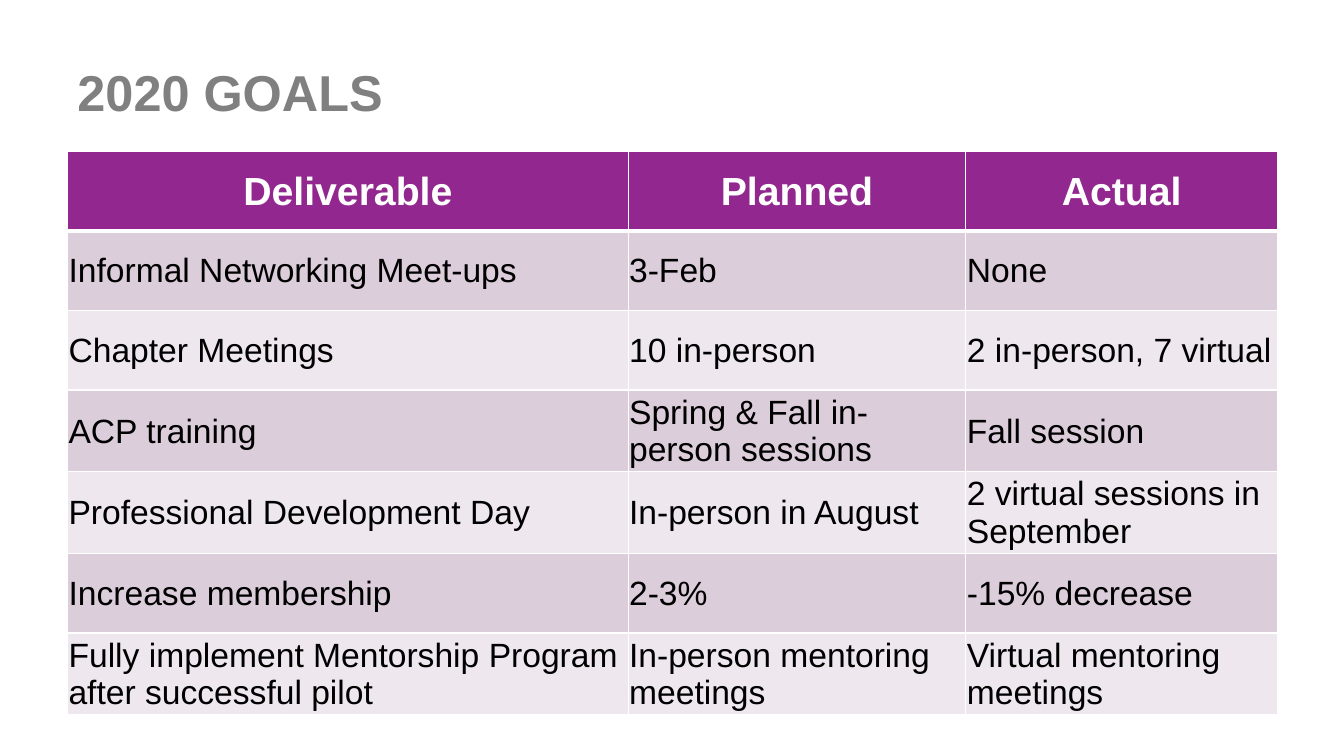
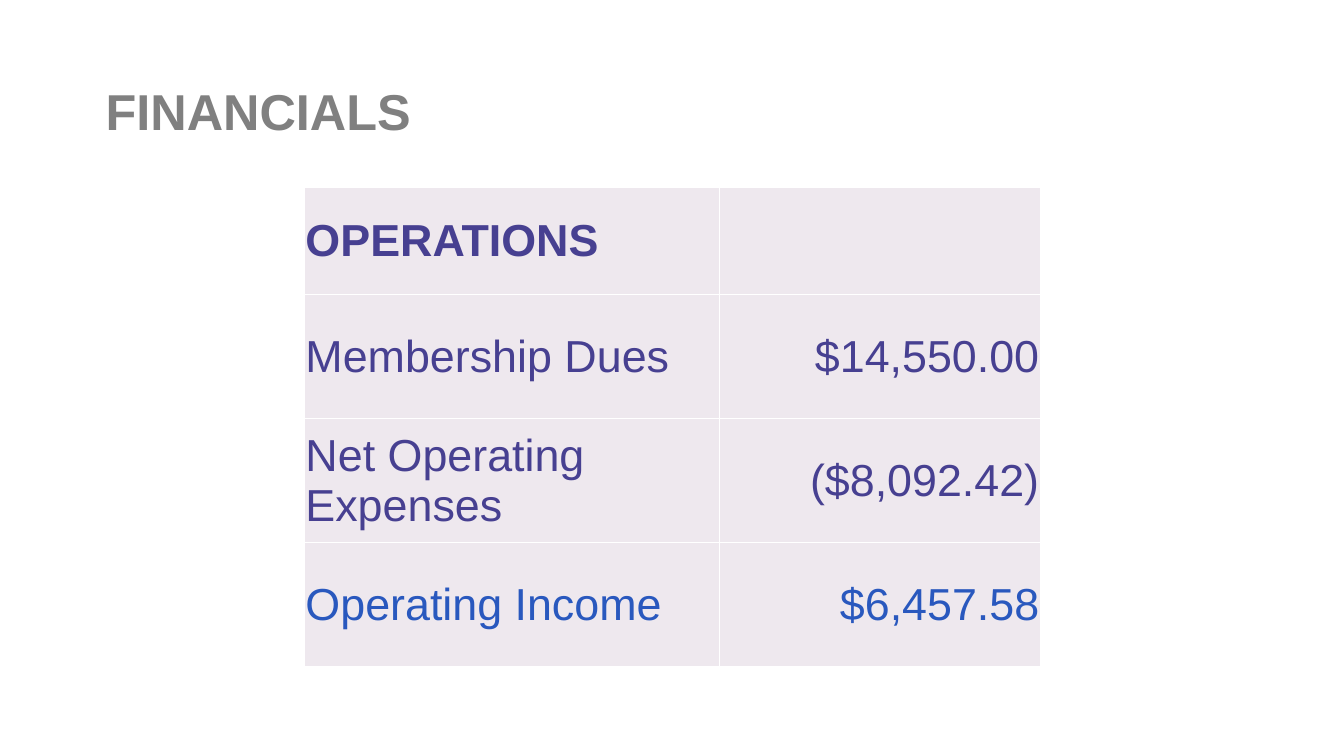
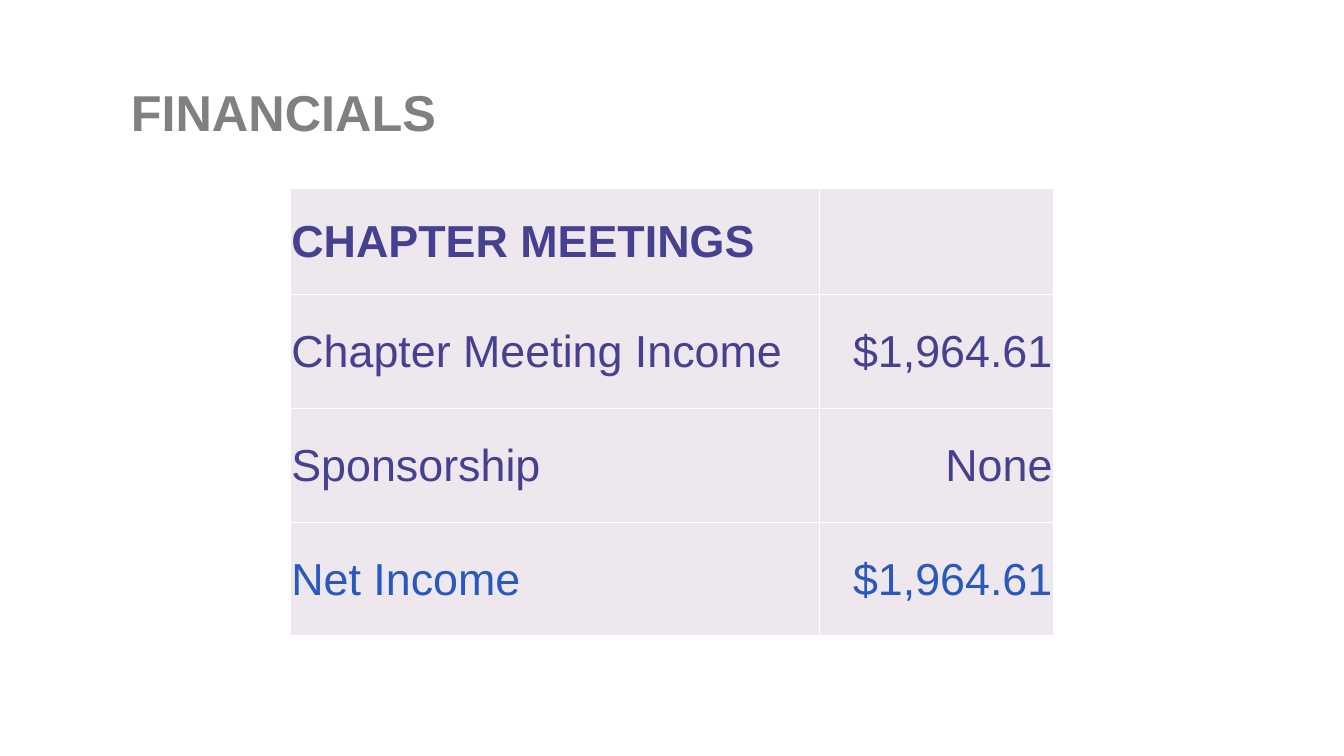
from lxml import etree
from pptx import Presentation
from pptx.dml.color import RGBColor
from pptx.enum.text import MSO_ANCHOR, PP_ALIGN
from pptx.oxml.ns import qn
from pptx.util import Inches, Pt

LEFT, CENTER, RIGHT = PP_ALIGN.LEFT, PP_ALIGN.CENTER, PP_ALIGN.RIGHT
MIDDLE = MSO_ANCHOR.MIDDLE

FONT = "Arial"
COLORS = {
    "title": "808080", "header": "92278F", "white": "FFFFFF", "black": "000000",
    "band": "DCCDDB", "pale": "EEE8EE", "label": "474091", "total": "2958BE",
}

GOALS = [
    ("Deliverable", "Planned", "Actual"),
    ("Informal Networking Meet-ups", "3-Feb", "None"),
    ("Chapter Meetings", "10 in-person", "2 in-person, 7 virtual"),
    ("ACP training", "Spring & Fall in-person sessions", "Fall session"),
    ("Professional Development Day", "In-person in August",
     "2 virtual sessions in September"),
    ("Increase membership", "2-3%", "-15% decrease"),
    ("Fully implement Mentorship Program after successful pilot",
     "In-person mentoring meetings", "Virtual mentoring meetings"),
]
OPERATIONS = [
    ("OPERATIONS", ""),
    ("Membership Dues", "$14,550.00"),
    ("Net Operating Expenses", "($8,092.42)"),
    ("Operating Income", "$6,457.58"),
]
MEETINGS = [
    ("CHAPTER MEETINGS", ""),
    ("Chapter Meeting Income", "$1,964.61"),
    ("Sponsorship", "None"),
    ("Net Income", "$1,964.61"),
]


def goals_style(row, col, rows):
    if row == 0:
        return "header", dict(size=28, color="white", bold=True, align=CENTER)
    return ("band" if row % 2 else "pale"), dict(size=24, color="black")


def financials_style(row, col, rows):
    return "pale", dict(size=32, bold=row == 0, align=RIGHT if col else LEFT,
                        color="total" if row == rows - 1 else "label")


# title, title box, table rows, table corner, column widths,
# header height, row height, cell style, line width under the header
SLIDES = [
    ("2020 GOALS", (0.67, 0.22, 11.5, 1.45), GOALS, (0.67, 1.5),
     (5.56, 3.35, 3.09), 0.79, 0.79, goals_style, 3),
    ("FINANCIALS", (0.95, 0.41, 7.8, 1.45), OPERATIONS, (3.02, 1.86),
     (4.12, 3.18), 1.06, 1.23, financials_style, 1),
    ("FINANCIALS", (1.2, 0.42, 5.46, 1.45), MEETINGS, (2.88, 1.87),
     (5.25, 2.32), 1.05, 1.13, financials_style, 1),
]


def rgb(name):
    return RGBColor.from_string(COLORS[name])


def write(tf, text, size, color, bold=False, align=LEFT, spacing=None):
    tf.word_wrap = True
    p = tf.paragraphs[0]
    p.alignment = align
    if spacing:
        p.line_spacing = spacing
    r = p.add_run()
    r.text = text
    r.font.name, r.font.size, r.font.bold = FONT, Pt(size), bold
    r.font.color.rgb = rgb(color)


def add_title(s, text, box):
    tf = s.shapes.add_textbox(*map(Inches, box)).text_frame
    tf.vertical_anchor = MIDDLE
    write(tf, text, size=36, color="title", bold=True, spacing=0.9)


def set_borders(cell, top, bottom):
    """Draw white borders; call before the fill, which must follow them."""
    tc_pr = cell._tc.get_or_add_tcPr()
    for side, width in (("L", 1), ("R", 1), ("T", top), ("B", bottom)):
        ln = etree.SubElement(tc_pr, qn("a:ln" + side), w=str(Pt(width)))
        fill = etree.SubElement(ln, qn("a:solidFill"))
        etree.SubElement(fill, qn("a:srgbClr"), val=COLORS["white"])


def add_grid(s, rows, corner, widths, header_height, row_height, style, rule):
    heights = [header_height] + [row_height] * (len(rows) - 1)
    size = (sum(widths), sum(heights))
    table = s.shapes.add_table(len(rows), len(widths),
                               *map(Inches, corner + size)).table
    table.first_row = table.horz_banding = False
    for column, width in zip(table.columns, widths):
        column.width = Inches(width)
    for i, (row, height) in enumerate(zip(rows, heights)):
        table.rows[i].height = Inches(height)
        for j, text in enumerate(row):
            cell = table.cell(i, j)
            fill, text_format = style(i, j, len(rows))
            set_borders(cell, top=rule if i == 1 else 1,
                        bottom=rule if i == 0 else 1)
            cell.fill.solid()
            cell.fill.fore_color.rgb = rgb(fill)
            cell.vertical_anchor = MIDDLE
            cell.margin_left = cell.margin_right = cell.margin_top = Inches(0.01)
            cell.margin_bottom = 0
            if text:
                write(cell.text_frame, text, **text_format)


def main():
    prs = Presentation()
    prs.slide_width, prs.slide_height = Inches(13.33), Inches(7.5)
    for title, box, *grid in SLIDES:
        s = prs.slides.add_slide(prs.slide_layouts[6])
        add_title(s, title, box)
        add_grid(s, *grid)
    prs.save("out.pptx")


if __name__ == "__main__":
    main()
